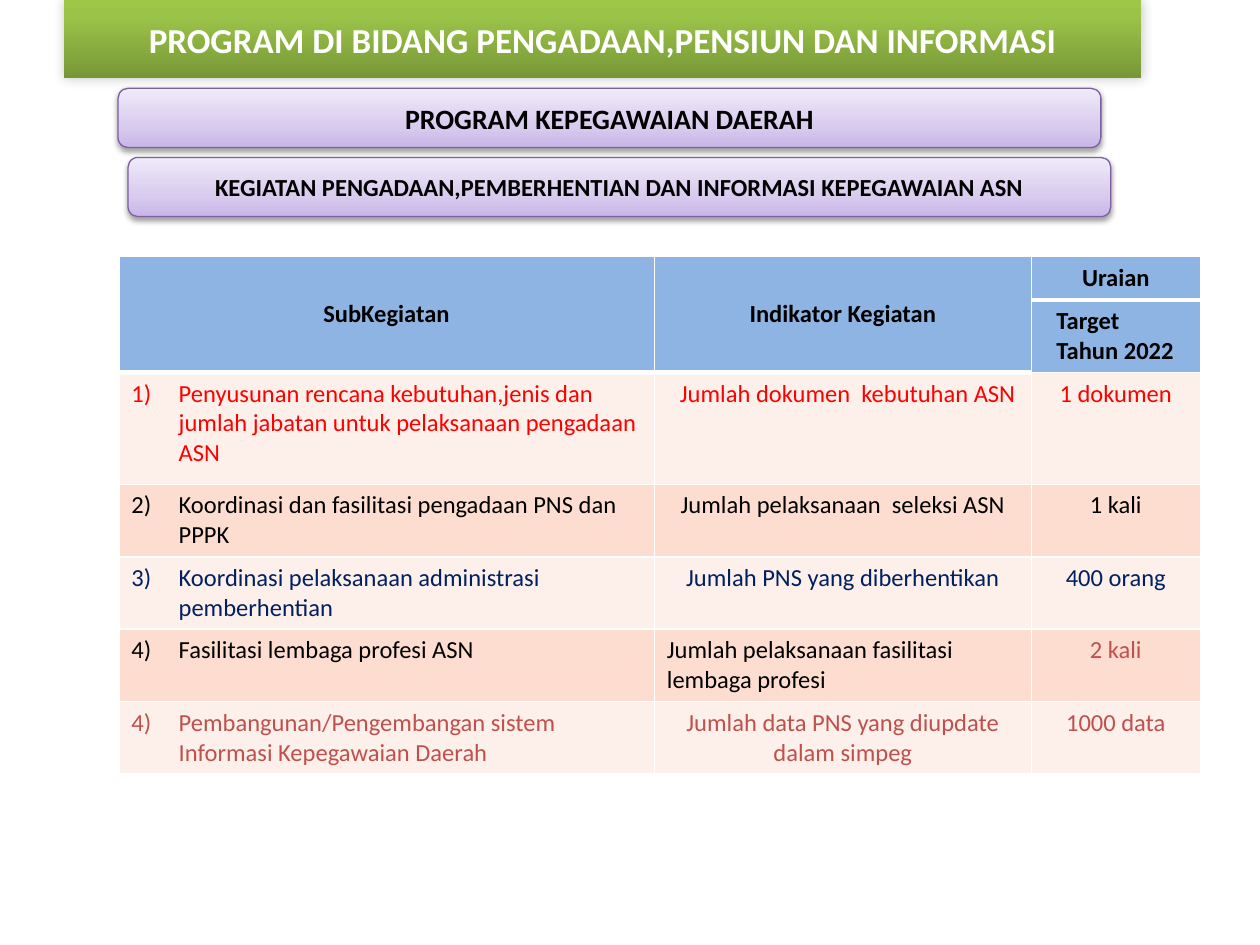
"""Build the staffing programme slide with its banners and activity table."""
from typing import NamedTuple

import lxml.etree
import pptx
import pptx.dml.color
import pptx.enum.shapes
import pptx.enum.text
import pptx.oxml
import pptx.oxml.ns
import pptx.util

Pt = pptx.util.Pt
RGB = pptx.dml.color.RGBColor
SHAPE = pptx.enum.shapes.MSO_SHAPE
ALIGN = pptx.enum.text.PP_ALIGN
ANCHOR = pptx.enum.text.MSO_ANCHOR
NS = pptx.oxml.ns.nsdecls("a")

BLACK = RGB(0x00, 0x00, 0x00)
WHITE = RGB(0xFF, 0xFF, 0xFF)
RED = RGB(0xFF, 0x00, 0x00)
NAVY = RGB(0x00, 0x20, 0x60)
BRICK = RGB(0xC0, 0x50, 0x4D)
PURPLE = RGB(0x7D, 0x60, 0xA0)
BLUE = RGB(0x8E, 0xB4, 0xE3)
PALE = RGB(0xFD, 0xEF, 0xE9)
PEACH = RGB(0xFC, 0xDD, 0xCF)

FONT = "Calibri"
COLUMNS = (306, 215.5, 96.5)
ROWS = (25.2, 41.2, 64, 41.4, 41.4, 41.4, 41.4)
MARGIN = 7.2
NUMBER_INDENT = 27


class Look(NamedTuple):
    stops: tuple[tuple[int, str], ...]
    shadow: tuple[int, float, float, int]
    line: RGB | None
    color: RGB


class Banner(NamedTuple):
    text: str
    box: tuple[float, float, float, float]
    kind: int
    size: int
    look: Look


class Item(NamedTuple):
    text: str
    color: RGB = BLACK
    align: int | None = ALIGN.CENTER
    bold: bool = False
    number: int = 0
    inset: float = MARGIN


GREEN_LOOK = Look(((0, "779737"), (80, "9BC348"), (100, "9DC746")),
                  (20, 6, 0, 315), None, WHITE)
LILAC_LOOK = Look(((0, "C9B5E8"), (35, "D8CBEE"), (100, "F0EAF9")),
                  (38, 3.1, 1.6, 90), PURPLE, BLACK)

BANNERS = (
    Banner("PROGRAM DI BIDANG PENGADAAN,PENSIUN DAN INFORMASI",
           (36.7, 0, 615.6, 44.8), SHAPE.RECTANGLE, 20, GREEN_LOOK),
    Banner("KEGIATAN PENGADAAN,PEMBERHENTIAN DAN INFORMASI KEPEGAWAIAN ASN",
           (73.2, 90, 561.6, 33.8), SHAPE.ROUNDED_RECTANGLE, 14, LILAC_LOOK),
    Banner("PROGRAM KEPEGAWAIAN DAERAH",
           (67.5, 50.5, 561.6, 33.8), SHAPE.ROUNDED_RECTANGLE, 16, LILAC_LOOK),
)

HEADER = (
    (Item("SubKegiatan", bold=True), Item("Indikator Kegiatan", bold=True),
     Item("Uraian", bold=True)),
    (None, None, Item("Target\vTahun 2022", align=ALIGN.LEFT, bold=True, inset=14.3)),
)
BODY = (
    (Item("Penyusunan rencana kebutuhan,jenis dan jumlah jabatan untuk pelaksanaan "
          "pengadaan ASN", RED, None, number=1),
     Item("Jumlah dokumen  kebutuhan ASN", RED, inset=12.9),
     Item("1 dokumen", RED)),
    (Item("Koordinasi dan fasilitasi pengadaan PNS dan PPPK", BLACK, None, number=2),
     Item("Jumlah pelaksanaan  seleksi ASN"),
     Item("1 kali")),
    (Item("Koordinasi pelaksanaan administrasi pemberhentian", NAVY, None, number=3),
     Item("Jumlah PNS yang diberhentikan", NAVY),
     Item("400 orang", NAVY)),
    (Item("Fasilitasi lembaga profesi ASN", BLACK, None, number=4),
     Item("Jumlah pelaksanaan fasilitasi lembaga profesi", align=None),
     Item("2 kali", BRICK)),
    (Item("Pembangunan/Pengembangan sistem Informasi Kepegawaian Daerah", BRICK, None,
          number=4),
     Item("Jumlah data PNS yang diupdate dalam simpeg", BRICK),
     Item("1000 data", BRICK)),
)


def set_font(p, size: float, color: RGB, bold: bool) -> None:
    """Set the font of a whole paragraph."""
    p.font.name, p.font.size, p.font.bold = FONT, Pt(size), bold
    p.font.color.rgb = color


def add_effects(sp, look: Look) -> None:
    """Give a shape its upward gradient and soft shadow."""
    stops = "".join(f'<a:gs pos="{pos * 1000}"><a:srgbClr val="{color}"/></a:gs>'
                    for pos, color in look.stops)
    geometry = sp._element.spPr.find(pptx.oxml.ns.qn("a:prstGeom"))
    geometry.addnext(pptx.oxml.parse_xml(
        f'<a:gradFill {NS} rotWithShape="1"><a:gsLst>{stops}</a:gsLst>'
        '<a:lin ang="16200000" scaled="0"/></a:gradFill>'))
    sp.shadow.inherit = False
    alpha, blur, distance, angle = look.shadow
    effects = sp._element.spPr.find(pptx.oxml.ns.qn("a:effectLst"))
    effects.append(pptx.oxml.parse_xml(
        f'<a:outerShdw {NS} blurRad="{Pt(blur)}" dist="{Pt(distance)}" '
        f'dir="{angle * 60000}" rotWithShape="0"><a:srgbClr val="000000">'
        f'<a:alpha val="{alpha * 1000}"/></a:srgbClr></a:outerShdw>'))


def add_banner(s, banner: Banner) -> None:
    """Draw one heading banner."""
    sp = s.shapes.add_shape(banner.kind, *map(Pt, banner.box))
    if banner.look.line is None:
        sp.line.fill.background()
    else:
        sp.line.color.rgb = banner.look.line
        sp.line.width = Pt(0.75)
    add_effects(sp, banner.look)
    tf = sp.text_frame
    tf.word_wrap = True
    tf.vertical_anchor = ANCHOR.MIDDLE
    p = tf.paragraphs[0]
    p.text = banner.text
    p.alignment = ALIGN.CENTER
    set_font(p, banner.size, banner.look.color, True)


def set_borders(cell, top: int, bottom: int) -> None:
    """Draw white borders around a cell."""
    tcPr = cell._tc.get_or_add_tcPr()
    widths = {"L": 1, "R": 1, "T": top, "B": bottom}
    for i, (side, width) in enumerate(widths.items()):
        tcPr.insert(i, pptx.oxml.parse_xml(
            f'<a:ln{side} {NS} w="{Pt(width)}"><a:solidFill>'
            f'<a:srgbClr val="{WHITE}"/></a:solidFill></a:ln{side}>'))


def fill_cell(cell, item: Item) -> None:
    """Write one item into a cell."""
    cell.margin_left = Pt(item.inset)
    p = cell.text_frame.paragraphs[0]
    p.text = item.text
    p.alignment = item.align
    set_font(p, 14, item.color, item.bold)
    if item.number:
        pPr = p._p.get_or_add_pPr()
        pPr.set("marL", str(Pt(NUMBER_INDENT)))
        pPr.set("indent", str(-Pt(NUMBER_INDENT)))
        pPr.insert(0, pptx.oxml.parse_xml(
            f'<a:buAutoNum {NS} type="arabicParenR" startAt="{item.number}"/>'))


def is_heavy(row: int, col: int) -> bool:
    """Tell whether a cell has the thick header rule below it."""
    return row == 0 or (row == 1 and col < 2)


def add_activity_table(s) -> None:
    """Draw the table of activities, indicators and targets."""
    table = s.shapes.add_table(len(ROWS), len(COLUMNS), Pt(67.9), Pt(146.3),
                               Pt(sum(COLUMNS)), Pt(sum(ROWS))).table
    for column, width in zip(table.columns, COLUMNS):
        column.width = Pt(width)
    for row, height in zip(table.rows, ROWS):
        row.height = Pt(height)
    for col in (0, 1):
        table.cell(0, col).merge(table.cell(1, col))
    for r, items in enumerate(HEADER + BODY):
        for c, item in enumerate(items):
            cell = table.cell(r, c)
            cell.fill.solid()
            cell.fill.fore_color.rgb = BLUE if r < 2 else (PALE, PEACH)[r % 2]
            set_borders(cell, 3 if r and is_heavy(r - 1, c) else 1,
                        3 if is_heavy(r, c) else 1)
            cell.vertical_anchor = ANCHOR.MIDDLE if r == 0 else ANCHOR.TOP
            if item:
                fill_cell(cell, item)


def main() -> None:
    """Build and save the slide."""
    prs = pptx.Presentation()
    prs.slide_width, prs.slide_height = Pt(720), Pt(540)
    s = prs.slides.add_slide(prs.slide_layouts[6])
    add_activity_table(s)
    for banner in BANNERS:
        add_banner(s, banner)
    prs.save("out.pptx")


if __name__ == "__main__":
    main()
